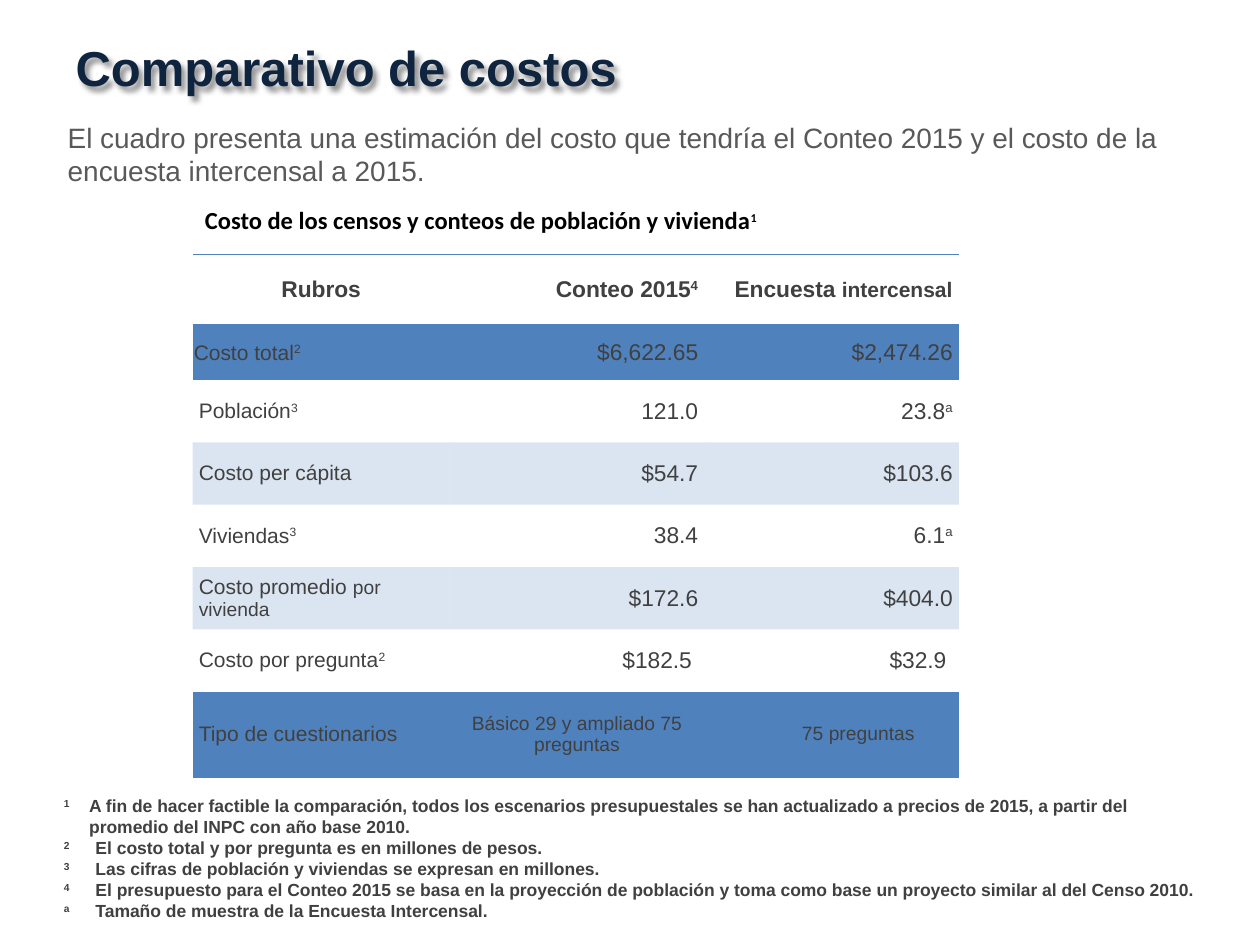
from dataclasses import dataclass

from lxml.etree import SubElement
from pptx import Presentation
from pptx.dml.color import RGBColor
from pptx.enum.text import MSO_ANCHOR as Anchor, MSO_AUTO_SIZE as AutoSize, PP_ALIGN as Align
from pptx.oxml.ns import qn
from pptx.util import Pt


@dataclass(frozen=True)
class Theme:
    font: str = "Arial"
    caption_font: str = "Calibri"
    title: str = "0F243E"
    intro: str = "595959"
    ink: str = "404040"
    black: str = "000000"
    accent: str = "4F81BD"
    title_size: int = 28
    intro_size: int = 16
    caption_size: int = 14
    figure_size: int = 13
    label_size: int = 12
    small_size: int = 11
    note_size: int = 10


@dataclass(frozen=True)
class Span:
    text: str
    size: int = 0
    raised: bool = False


THEME = Theme()
TIGHT = (3.6, 3.6, 3.6, 3.6)
NORMAL = (7.2, 3.6, 7.2, 3.6)
FLUSH = (0.72, 0.72, 20, 0)
SHIFTED = (37.8, 3.6, 7.2, 3.6)
COLUMN_WIDTHS = (147, 145.5, 145.5)
ROW_HEIGHTS = (40, 32, 35.6, 35.6, 35.6, 35.6, 35.6, 48.8)


def raised(text, size=0):
    return Span(text, size, True)


ROWS = (
    (("Rubros",), ("Conteo 2015", raised("4")),
     ("Encuesta ", Span("intercensal", THEME.label_size))),
    (("Costo total", raised("2")), ("$6,622.65",), ("$2,474.26",)),
    (("Población", raised("3")), ("121.0",), ("23.8", raised("a"))),
    (("Costo per cápita",), ("$54.7",), ("$103.6",)),
    (("Viviendas", raised("3")), ("38.4",), ("6.1", raised("a"))),
    (("Costo promedio ", Span("por vivienda", THEME.small_size)), ("$172.6",), ("$404.0",)),
    (("Costo por pregunta", raised("2")), ("$182.5",), ("$32.9",)),
    (("Tipo de cuestionarios",), ("Básico 29 y ampliado 75 preguntas",), ("75 preguntas",)),
)
NOTES = (
    ("1", "A fin de hacer factible la comparación, todos los escenarios presupuestales se han "
          "actualizado a precios de 2015, a partir del promedio del INPC con año base 2010."),
    ("2", "El costo total y por pregunta es en millones de pesos."),
    ("3", "Las cifras de población y viviendas se expresan en millones."),
    ("4", "El presupuesto para el Conteo 2015 se basa en la proyección de población y toma "
          "como base un proyecto similar al del Censo 2010."),
    ("a", "Tamaño de muestra de la Encuesta Intercensal."),
)


def write(paragraph, spans, size, color, bold=False, align=Align.LEFT, name=THEME.font):
    paragraph.alignment = align
    paragraph.space_before = Pt(0)
    font = paragraph.font
    font.name, font.size, font.bold = name, Pt(size), bold
    font.color.rgb = RGBColor.from_string(color)
    for item in spans:
        span = item if isinstance(item, Span) else Span(item)
        run = paragraph.add_run()
        run.text = span.text
        if span.size:
            run.font.size = Pt(span.size)
        if span.raised:
            run._r.get_or_add_rPr().set("baseline", "30000")


def place(box, left, top, width, height):
    box.left, box.top, box.width, box.height = Pt(left), Pt(top), Pt(width), Pt(height)
    frame = box.text_frame
    frame.word_wrap = True
    frame.auto_size = AutoSize.NONE
    frame.vertical_anchor = Anchor.TOP
    return frame


def add_text_box(page, left, top, width, height):
    box = page.shapes.add_textbox(0, 0, 0, 0)
    return place(box, left, top, width, height)


def set_indent(paragraph, hanging=0):
    properties = paragraph._p.get_or_add_pPr()
    properties.set("marL", str(Pt(hanging)))
    properties.set("indent", str(-Pt(hanging)))
    return properties


def add_shadow(box):
    effects = SubElement(box._element.spPr, qn("a:effectLst"))
    shadow = SubElement(effects, qn("a:outerShdw"), blurRad=str(Pt(3)), dist=str(Pt(3)),
                        dir="2700000", algn="tl", rotWithShape="0")
    color = SubElement(shadow, qn("a:srgbClr"), val=THEME.black)
    SubElement(color, qn("a:alpha"), val="43000")


def add_title(page):
    box = page.shapes.title
    frame = place(box, 36, 15, 648, 34)
    frame.margin_top = Pt(6.5)
    write(frame.paragraphs[0], ["Comparativo de costos"], THEME.title_size, THEME.title, True)
    add_shadow(box)


def add_intro(page):
    frame = place(page.placeholders[1], 31.5, 65, 673, 73)
    paragraph = frame.paragraphs[0]
    SubElement(set_indent(paragraph), qn("a:buNone"))
    write(paragraph, ["El cuadro presenta una estimación del costo que tendría el Conteo 2015 "
                      "y el costo de la encuesta intercensal a 2015."],
          THEME.intro_size, THEME.intro)


def add_caption(page):
    frame = add_text_box(page, 110, 113.5, 587.5, 28)
    write(frame.paragraphs[0],
          ["Costo de los censos y conteos de población y vivienda",
           raised("1", THEME.label_size)],
          THEME.caption_size, THEME.black, True, name=THEME.caption_font)


def set_borders(cell, ruled_sides):
    properties = cell._tc.get_or_add_tcPr()
    for side in "LRTB":
        line = SubElement(properties, qn(f"a:ln{side}"), w=str(Pt(1)))
        if side in ruled_sides:
            fill = SubElement(line, qn("a:solidFill"))
            SubElement(fill, qn("a:srgbClr"), val=THEME.accent)
        else:
            SubElement(line, qn("a:noFill"))


def set_fill(cell, banded):
    if not banded:
        cell.fill.background()
        return
    cell.fill.solid()
    cell.fill.fore_color.rgb = RGBColor.from_string(THEME.accent)
    color = cell._tc.tcPr.find(".//" + qn("a:srgbClr"))
    SubElement(color, qn("a:alpha"), val="20000")


def cell_layout(row, column):
    last = len(ROWS) - 1
    if row == 0:
        return (Align.RIGHT, TIGHT) if column else (Align.CENTER, NORMAL)
    if column == 0:
        return Align.LEFT, FLUSH if row == 1 else TIGHT
    if row == last:
        return Align.CENTER, SHIFTED if column == 2 else NORMAL
    return Align.RIGHT, NORMAL if row == last - 1 else TIGHT


def fill_cell(cell, row, column, spans):
    header, last = row == 0, row == len(ROWS) - 1
    align, margins = cell_layout(row, column)
    set_borders(cell, "TB" if header else "B" if last else "T" if row == 1 else "")
    set_fill(cell, row % 2 == 1)
    cell.vertical_anchor = Anchor.MIDDLE
    cell.margin_left, cell.margin_top, cell.margin_right, cell.margin_bottom = map(Pt, margins)
    size = THEME.figure_size
    if not header and column == 0:
        size = THEME.label_size
    elif last:
        size = THEME.small_size
    write(cell.text_frame.paragraphs[0], spans, size, THEME.ink, header, align)


def add_cost_table(page):
    frame = page.shapes.add_table(len(ROWS), len(COLUMN_WIDTHS), Pt(110), Pt(145.3),
                                  Pt(sum(COLUMN_WIDTHS)), Pt(sum(ROW_HEIGHTS)))
    table = frame.table
    table.first_row = table.horz_banding = False
    for column, width in zip(table.columns, COLUMN_WIDTHS):
        column.width = Pt(width)
    for row, height in zip(table.rows, ROW_HEIGHTS):
        row.height = Pt(height)
    for row, cells in enumerate(ROWS):
        for column, spans in enumerate(cells):
            fill_cell(table.cell(row, column), row, column, spans)


def add_notes(page):
    frame = add_text_box(page, 29.5, 450.7, 662.5, 80)
    for index, (mark, text) in enumerate(NOTES):
        paragraph = frame.add_paragraph() if index else frame.paragraphs[0]
        tabs = SubElement(set_indent(paragraph, 18 if index else 14.4), qn("a:tabLst"))
        SubElement(tabs, qn("a:tab"), pos=str(Pt(13.7)), algn="l")
        write(paragraph, [raised(mark), "\t" + text], THEME.note_size, THEME.ink, True)


def main():
    deck = Presentation()
    deck.slide_width, deck.slide_height = Pt(720), Pt(540)
    page = deck.slides.add_slide(deck.slide_layouts[1])
    add_caption(page)
    add_cost_table(page)
    add_intro(page)
    add_title(page)
    add_notes(page)
    deck.save("out.pptx")


if __name__ == "__main__":
    main()
